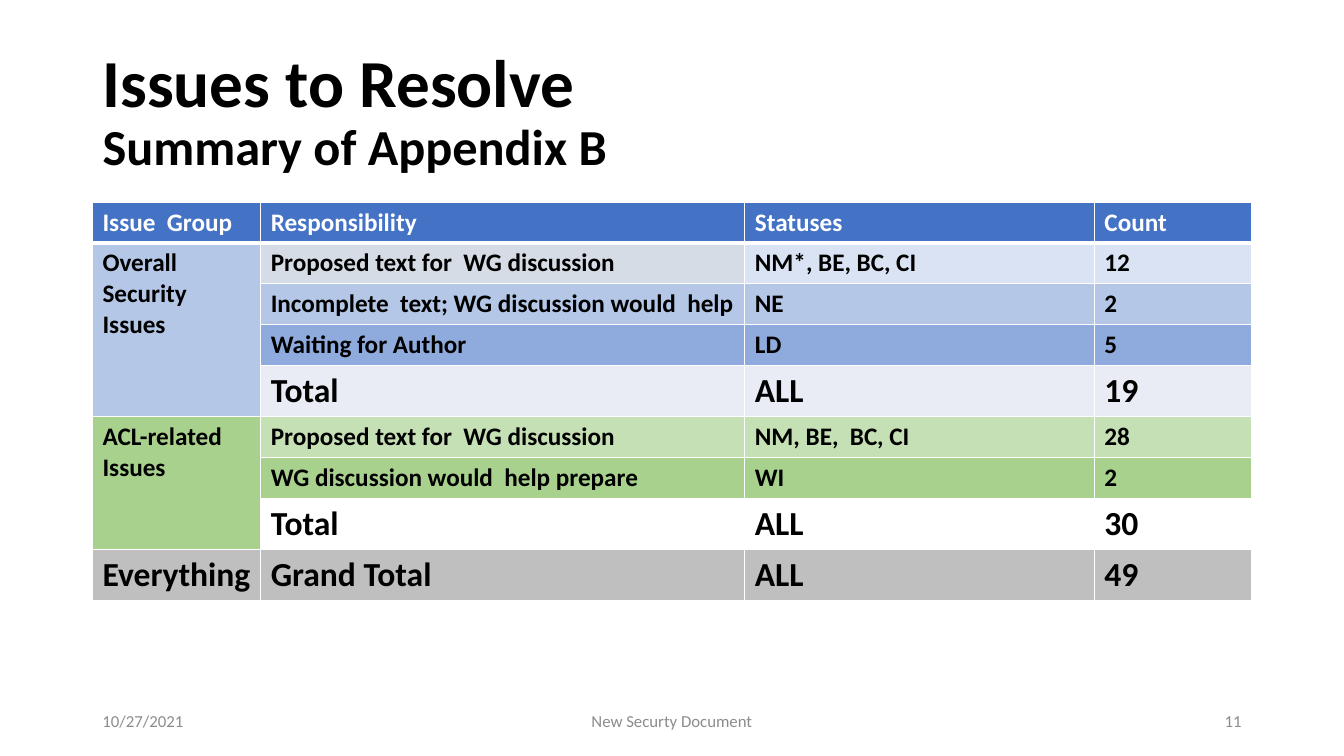
from dataclasses import dataclass

from lxml.etree import SubElement
from pptx import Presentation
from pptx.dml.color import RGBColor
from pptx.enum.text import MSO_ANCHOR, MSO_AUTO_SIZE, PP_ALIGN
from pptx.oxml.ns import qn
from pptx.slide import Slide
from pptx.table import _Cell
from pptx.util import Cm, Pt

FONT = "Calibri"
COLORS = {
    "black": "000000",
    "white": "FFFFFF",
    "footer": "8C8C8C",
    "header": "4472C4",
    "slate": "D6DCE5",
    "blue_pale": "DAE3F3",
    "blue_light": "B4C7E7",
    "blue_mid": "8FAADC",
    "blue_total": "E9EBF5",
    "green_light": "C5E0B4",
    "green_mid": "A9D18E",
    "gray": "BFBFBF",
}
LEFT, CONTENT_WIDTH = 2.33, 29.21
COLUMN_WIDTHS = (4.24, 12.2, 8.81, 3.96)
ROW_HEIGHT = 1.03


@dataclass(frozen=True)
class IssueRow:
    responsibility: str
    statuses: str
    count: str
    fill: str
    size: int = 18
    color: str = "black"
    responsibility_fill: str = ""


@dataclass(frozen=True)
class IssueGroup:
    label: str
    fill: str
    rows: tuple[IssueRow, ...]


@dataclass(frozen=True)
class FooterItem:
    text: str
    left: float
    width: float
    alignment: PP_ALIGN


GROUPS = (
    IssueGroup("Issue  Group", "header", (
        IssueRow("Responsibility", "Statuses", "Count", "header", color="white"),
    )),
    IssueGroup("Overall Security Issues", "blue_light", (
        IssueRow("Proposed text for  WG discussion", "NM*, BE, BC, CI", "12",
                 "blue_pale", responsibility_fill="slate"),
        IssueRow("Incomplete  text; WG discussion would  help", "NE", "2", "blue_light"),
        IssueRow("Waiting for Author", "LD", "5", "blue_mid"),
        IssueRow("Total", "ALL", "19", "blue_total", 24),
    )),
    IssueGroup("ACL-related Issues", "green_mid", (
        IssueRow("Proposed text for  WG discussion", "NM, BE,  BC, CI", "28", "green_light"),
        IssueRow("WG discussion would  help prepare", "WI", "2", "green_mid"),
        IssueRow("Total", "ALL", "30", "white", 24),
    )),
    IssueGroup("Everything", "gray", (
        IssueRow("Grand Total", "ALL", "49", "gray", 24),
    )),
)
FOOTER = (
    FooterItem("10/27/2021", LEFT, 7.62, PP_ALIGN.LEFT),
    FooterItem("New Securty Document", 11.22, 11.43, PP_ALIGN.CENTER),
    FooterItem("11", 23.92, 7.62, PP_ALIGN.RIGHT),
)


def rgb(name: str) -> RGBColor:
    return RGBColor.from_string(COLORS[name])


def format_font(font, size: int, color: str, bold: bool) -> None:
    font.name = FONT
    font.size = Pt(size)
    font.bold = bold
    font.color.rgb = rgb(color)


def add_borders(cell: _Cell, bottom_width: int) -> None:
    properties = cell._tc.get_or_add_tcPr()
    for side, width in (("L", 1), ("R", 1), ("T", 1), ("B", bottom_width)):
        border = SubElement(properties, qn(f"a:ln{side}"), w=str(Pt(width)))
        SubElement(SubElement(border, qn("a:solidFill")), qn("a:srgbClr"),
                   val=COLORS["white"])


def fill_cell(cell: _Cell, text: str, fill: str, size: int, color: str) -> None:
    cell.fill.solid()
    cell.fill.fore_color.rgb = rgb(fill)
    cell.text = text
    format_font(cell.text_frame.paragraphs[0].font, size, color, True)


def format_title(slide: Slide) -> None:
    title = slide.shapes.title
    title.left, title.top = Cm(LEFT), Cm(1.01)
    title.width, title.height = Cm(CONTENT_WIDTH), Cm(3.68)
    frame = title.text_frame
    frame.auto_size = MSO_AUTO_SIZE.NONE
    frame.vertical_anchor = MSO_ANCHOR.MIDDLE
    heading = frame.paragraphs[0]
    heading.alignment = PP_ALIGN.LEFT
    heading.line_spacing = 0.9
    for text, size in (("Issues to Resolve", 48), ("Summary of Appendix B", 36)):
        if heading.runs:
            heading.add_line_break()
        run = heading.add_run()
        run.text = text
        format_font(run.font, size, "black", True)


def add_issue_table(slide: Slide) -> None:
    row_count = sum(len(group.rows) for group in GROUPS)
    table = slide.shapes.add_table(
        row_count, len(COLUMN_WIDTHS), Cm(LEFT), Cm(5.09),
        Cm(CONTENT_WIDTH), Cm(ROW_HEIGHT * row_count)).table
    table.horz_banding = False
    for column, width in zip(table.columns, COLUMN_WIDTHS):
        column.width = Cm(width)
    for row in table.rows:
        row.height = Cm(ROW_HEIGHT)
    for index in range(row_count):
        for column_index in range(len(COLUMN_WIDTHS)):
            add_borders(table.cell(index, column_index), 3 if index == 0 else 1)

    top = 0
    for group in GROUPS:
        first = group.rows[0]
        label = table.cell(top, 0)
        if len(group.rows) > 1:
            label.merge(table.cell(top + len(group.rows) - 1, 0))
        fill_cell(label, group.label, group.fill, first.size, first.color)
        for index, issue in enumerate(group.rows, top):
            entries = (
                (issue.responsibility, issue.responsibility_fill or issue.fill),
                (issue.statuses, issue.fill),
                (issue.count, issue.fill),
            )
            for column_index, (text, fill) in enumerate(entries, 1):
                fill_cell(table.cell(index, column_index), text, fill,
                          issue.size, issue.color)
        top += len(group.rows)


def add_footer_item(slide: Slide, item: FooterItem) -> None:
    frame = slide.shapes.add_textbox(
        Cm(item.left), Cm(17.65), Cm(item.width), Cm(1.01)).text_frame
    frame.word_wrap = True
    frame.vertical_anchor = MSO_ANCHOR.MIDDLE
    paragraph = frame.paragraphs[0]
    paragraph.text = item.text
    paragraph.alignment = item.alignment
    format_font(paragraph.font, 12, "footer", False)


def main() -> None:
    presentation = Presentation()
    presentation.slide_width, presentation.slide_height = Cm(33.87), Cm(19.05)
    slide = presentation.slides.add_slide(presentation.slide_layouts[5])
    format_title(slide)
    add_issue_table(slide)
    for item in FOOTER:
        add_footer_item(slide, item)
    presentation.save("out.pptx")


if __name__ == "__main__":
    main()
